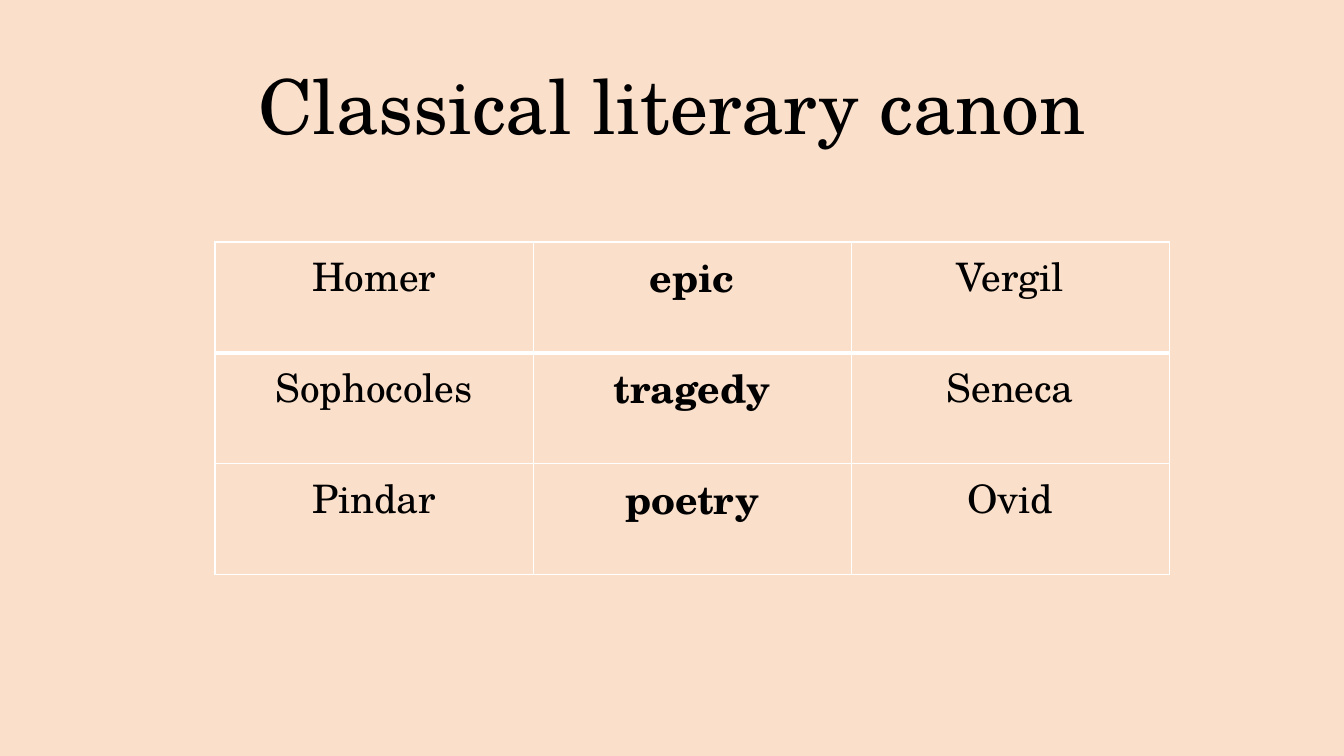
import pptx
import pptx.util
import pptx.dml.color
import pptx.enum.text
import pptx.oxml
import pptx.oxml.ns

RGB = pptx.dml.color.RGBColor
BLACK = RGB(0, 0, 0)
WHITE = RGB(255, 255, 255)
PEACH = RGB(0xFA, 0xDF, 0xCA)
ROWS = [
    ("Homer", "epic", "Vergil"),
    ("Sophocoles", "tragedy", "Seneca"),
    ("Pindar", "poetry", "Ovid"),
]


class Deck:
    """Holds the style and the current slide; lengths are shares of its size."""

    font = "TeX Gyre Schola"

    def __init__(self, wide, high):
        self.prs = pptx.Presentation()
        self.prs.slide_width = pptx.util.Inches(wide)
        self.prs.slide_height = pptx.util.Inches(high)
        self.slide = self.prs.slides.add_slide(self.prs.slide_layouts[5])
        fill = self.slide.background.fill
        fill.solid()
        fill.fore_color.rgb = PEACH

    def box(self, left, top, width, height):
        wide, high = self.prs.slide_width, self.prs.slide_height
        return [int(share * size) for share, size in
                zip((left, top, width, height), (wide, high, wide, high))]

    def label(self, frame, text, size, bold=False):
        frame.text = text
        line = frame.paragraphs[0]
        line.alignment = pptx.enum.text.PP_ALIGN.CENTER
        font = line.runs[0].font
        font.name = self.font
        font.size = pptx.util.Pt(size)
        font.bold = bold
        font.color.rgb = BLACK
        return line

    def title(self, text, area):
        shape = self.slide.shapes.title
        shape.left, shape.top, shape.width, shape.height = self.box(*area)
        frame = shape.text_frame
        frame.word_wrap = True
        frame.vertical_anchor = pptx.enum.text.MSO_ANCHOR.MIDDLE
        self.label(frame, text, 54).line_spacing = 0.9

    def edge(self, cell, widths):
        props = cell._tc.get_or_add_tcPr()
        space = pptx.oxml.ns.nsdecls("a")
        for spot, (side, width) in enumerate(widths.items()):
            props.insert(spot, pptx.oxml.parse_xml(
                f'<a:ln{side} {space} w="{pptx.util.Pt(width)}"><a:solidFill>'
                f'<a:srgbClr val="{WHITE}"/></a:solidFill></a:ln{side}>'))

    def table(self, rows, area, key):
        shape = self.slide.shapes.add_table(
            len(rows), len(rows[0]), *self.box(*area))
        grid = shape.table
        grid.first_row = grid.horz_banding = False
        for r, row in enumerate(rows):
            for c, text in enumerate(row):
                cell = grid.cell(r, c)
                cell.fill.background()
                self.label(cell.text_frame, text, 28, c == key)
                self.edge(cell, {"L": 1, "R": 1, "T": 3 if r == 1 else 1,
                                 "B": 3 if r == 0 else 1})

    def save(self):
        self.prs.save("out.pptx")


def main():
    deck = Deck(13.33, 7.5)
    deck.title("Classical literary canon", (0.07, 0.05, 0.86, 0.19))
    deck.table(ROWS, (0.16, 0.32, 0.71, 0.44), key=1)
    deck.save()


if __name__ == "__main__":
    main()
